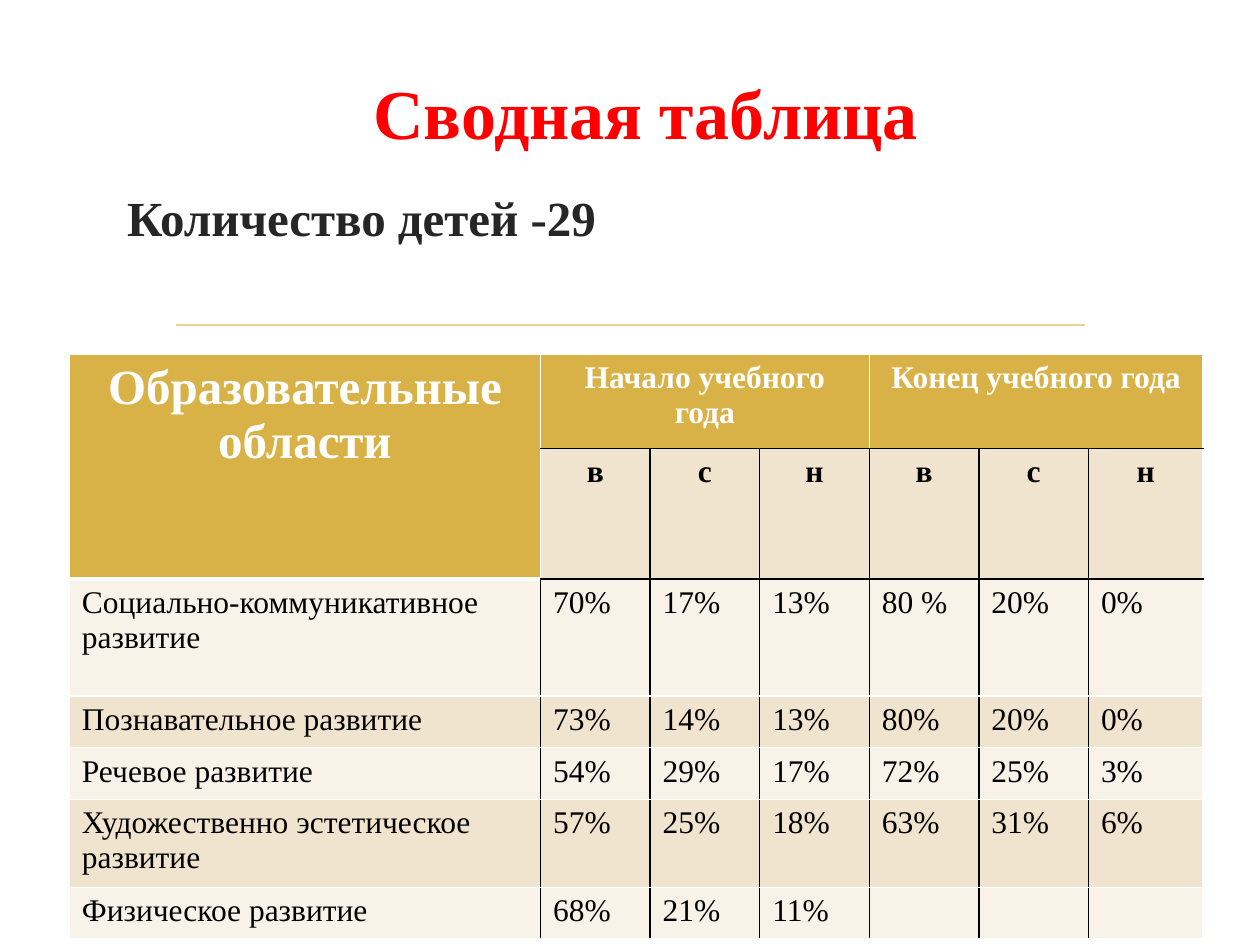
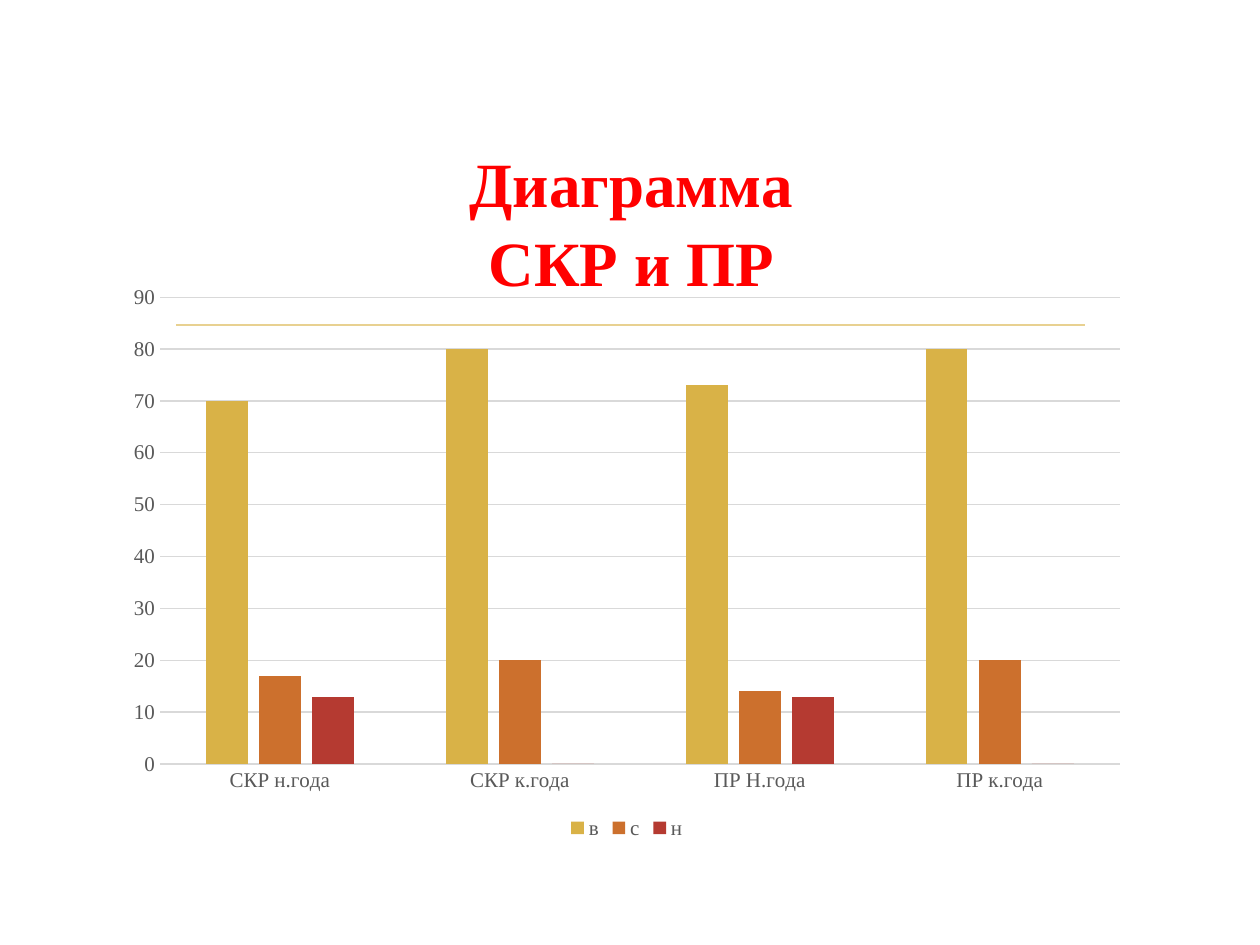
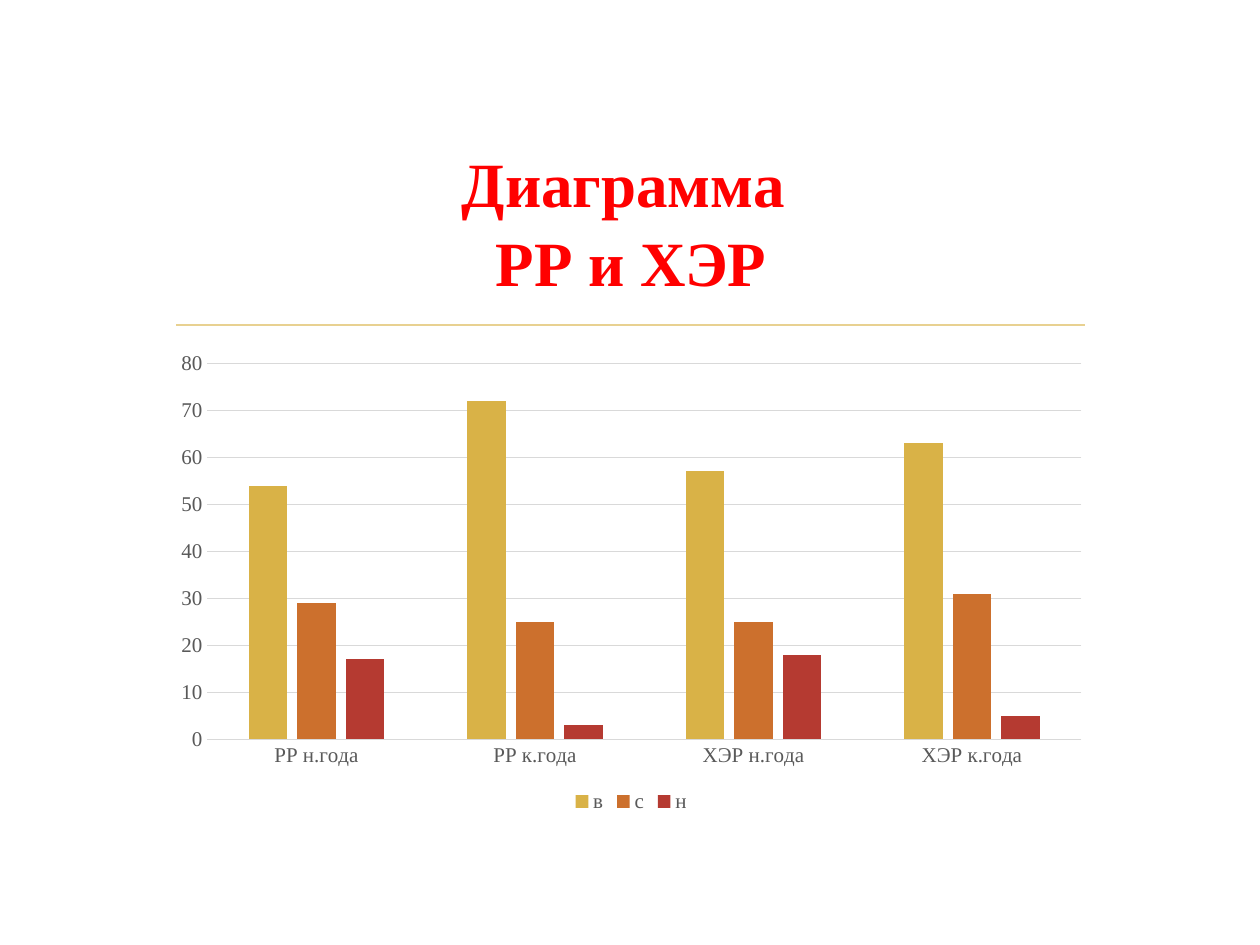
from lxml.etree import SubElement as Sub
from pptx import Presentation
from pptx.chart.data import CategoryChartData as ChartData
from pptx.dml.color import RGBColor
from pptx.enum.chart import XL_CHART_TYPE as Kind, XL_LEGEND_POSITION as Place
from pptx.enum.chart import XL_TICK_MARK as Tick
from pptx.enum.shapes import MSO_CONNECTOR as Link
from pptx.enum.text import MSO_ANCHOR as Anchor, PP_ALIGN as Align
from pptx.oxml.ns import qn
from pptx.util import Inches, Pt

FACE = "Times New Roman"
RED, INK, GREY, GRID = "FF0000", "262626", "595959", "D9D9D9"
GOLD, RULE, DARK, PALE = "D9B247", "E8D191", "F1E4CF", "F8F2E9"
BLACK, WHITE = "000000", "FFFFFF"
HUES = [GOLD, "CC702D", "B53A31"]
LEVELS = ["в", "с", "н"]

TITLE = dict(size=40, bold=True, color=RED)
HEAD = dict(TITLE, size=36)
NOTE = dict(size=28, bold=True, color=INK)
AREA = dict(NOTE, color=WHITE)
TERM = dict(AREA, size=18)
LEVEL = dict(TERM, color=BLACK)
BODY = dict(LEVEL, bold=False)
LABEL = dict(size=12, color=GREY)

ROWS = [
    ["Образовательные области", "Начало учебного года", "", "",
     "Конец учебного года", "", ""],
    ["", *LEVELS, *LEVELS],
    ["Социально-коммуникативное развитие",
     "70%", "17%", "13%", "80 %", "20%", "0%"],
    ["Познавательное развитие", "73%", "14%", "13%", "80%", "20%", "0%"],
    ["Речевое развитие", "54%", "29%", "17%", "72%", "25%", "3%"],
    ["Художественно эстетическое развитие",
     "57%", "25%", "18%", "63%", "31%", "6%"],
    ["Физическое развитие", "68%", "21%", "11%", "", "", ""],
]
WIDE = [3.74] + [0.87] * 5 + [0.91]
TALL = [0.75, 0.96, 0.93, 0.41, 0.41, 0.65, 0.41]
SPANS = [(0, 0, 1, 0), (0, 1, 0, 3), (0, 4, 0, 6)]

CHARTS = [
    dict(head="Диаграмма\vСКР и ПР", at=(0.9, 2.18, 8.15, 4.52), top=90,
         cats=["СКР н.года", "СКР к.года", "ПР Н.года", "ПР к.года"],
         vals=[(70, 80, 73, 80), (17, 20, 14, 20), (13, 0, 13, 0)]),
    dict(head="Диаграмма \vРР и ХЭР", at=(1.29, 2.72, 7.44, 3.77), top=80,
         cats=["РР н.года", "РР к.года", "ХЭР н.года", "ХЭР к.года"],
         vals=[(54, 72, 57, 63), (29, 25, 25, 31), (17, 3, 18, 5)]),
]


def rgb(code):
    return RGBColor.from_string(code)


def box(at):
    return [Inches(v) for v in at]


def style(font, form):
    font.name = FACE
    for key, val in form.items():
        if key == "color":
            font.color.rgb = rgb(val)
        else:
            setattr(font, key, Pt(val) if key == "size" else val)


def write(frame, text, form, align=Align.LEFT):
    frame.word_wrap = True
    par = frame.paragraphs[0]
    par.text, par.alignment = text, align
    for run in par.runs:
        style(run.font, form)
    return par


def add_text(slide, at, text, form, top, align=Align.LEFT, anchor=Anchor.TOP):
    frame = slide.shapes.add_textbox(*box(at)).text_frame
    frame.margin_top, frame.vertical_anchor = Inches(top), anchor
    return write(frame, text, form, align)


def add_title(slide, at, text, form):
    par = add_text(slide, at, text, form, 0.12, Align.CENTER, Anchor.MIDDLE)
    par.line_spacing = 1.04


def add_slide(deck):
    """Blank slide with the gold rule that every slide shares."""
    slide = deck.slides.add_slide(deck.slide_layouts[6])
    rule = slide.shapes.add_connector(
        Link.STRAIGHT, *box((1.4, 2.58, 8.61, 2.58)))
    rule.line.color.rgb, rule.line.width = rgb(RULE), Pt(1.25)
    Sub(rule._element.spPr, qn("a:effectLst"))
    return slide


def upright(row, col):
    """Colour of the border to the left of a column."""
    inner = 0 < row and 0 < col < len(WIDE)
    return BLACK if inner and (row, col) != (1, 1) else WHITE


def level(row, col):
    """Colour of the border above a row."""
    return BLACK if col and row in (1, 2) else WHITE


def edge(cell, row, col):
    end, low = col + cell.span_width, row + cell.span_height
    if not cell.is_merge_origin:
        end, low = col + 1, row + 1
    sides = [("L", upright(row, col), 1), ("R", upright(row, end), 1),
             ("T", level(row, col), 1),
             ("B", level(low, col), 3 if (low, col) == (2, 0) else 1)]
    for side, hue, width in sides:
        line = Sub(cell._tc.get_or_add_tcPr(), qn("a:ln" + side), w=str(Pt(width)))
        Sub(Sub(line, qn("a:solidFill")), qn("a:srgbClr"), val=hue)


def look(row, col):
    """Text format, fill and alignment of a cell."""
    if row == 0:
        return TERM if col else AREA, GOLD, Align.CENTER
    if row == 1:
        return LEVEL, DARK, Align.CENTER
    return BODY, DARK if row % 2 else PALE, Align.LEFT


def add_grid(slide, left, top):
    size = box((left, top, sum(WIDE), sum(TALL)))
    grid = slide.shapes.add_table(len(TALL), len(WIDE), *size).table
    for part, sizes in ((grid.columns, WIDE), (grid.rows, TALL)):
        for item, val in zip(part, sizes):
            setattr(item, "width" if sizes is WIDE else "height", Inches(val))
    for row, col, low, end in SPANS:
        grid.cell(row, col).merge(grid.cell(low, end))
    for row, texts in enumerate(ROWS):
        for col, text in enumerate(texts):
            cell = grid.cell(row, col)
            if cell.is_spanned:
                continue
            form, fill, align = look(row, col)
            edge(cell, row, col)
            cell.fill.solid()
            cell.fill.fore_color.rgb = rgb(fill)
            write(cell.text_frame, text, form, align)


def add_bars(slide, at, cats, vals, top):
    data = ChartData()
    data.categories = cats
    for name, nums in zip(LEVELS, vals):
        data.add_series(name, nums)
    chart = slide.shapes.add_chart(Kind.COLUMN_CLUSTERED, *box(at), data).chart
    style(chart.font, dict(size=10, color=BLACK))
    chart.has_title, chart.has_legend = False, True
    chart.legend.position = Place.BOTTOM
    chart.legend.include_in_layout = False
    style(chart.legend.font, LABEL)

    plot = chart.plots[0]
    plot.gap_width, plot.overlap, plot.vary_by_categories = 219, -27, False
    for bar, hue in zip(plot.series, HUES):
        bar.format.fill.solid()
        bar.format.fill.fore_color.rgb = rgb(hue)

    axis, scale = chart.category_axis, chart.value_axis
    for item in (axis, scale):
        item.major_tick_mark = item.minor_tick_mark = Tick.NONE
        style(item.tick_labels.font, LABEL)
    scale.minimum_scale, scale.maximum_scale, scale.major_unit = 0, top, 10
    scale.format.line.fill.background()
    for line in (axis.format.line, scale.major_gridlines.format.line):
        line.color.rgb, line.width = rgb(GRID), Pt(0.75)


def main():
    deck = Presentation()
    deck.slide_width, deck.slide_height = Inches(10), Inches(7.5)

    slide = add_slide(deck)
    add_title(slide, (0.75, 0.37, 8.75, 0.94), "Сводная таблица", TITLE)
    add_text(slide, (0.91, 1.39, 8.42, 4.32), "Количество детей -29", NOTE, 0.1)
    add_grid(slide, 0.55, 2.81)

    for item in CHARTS:
        slide = add_slide(deck)
        add_title(slide, (1.29, 1, 7.44, 1.43), item["head"], HEAD)
        add_bars(slide, item["at"], item["cats"], item["vals"], item["top"])

    deck.save("out.pptx")


if __name__ == "__main__":
    main()
